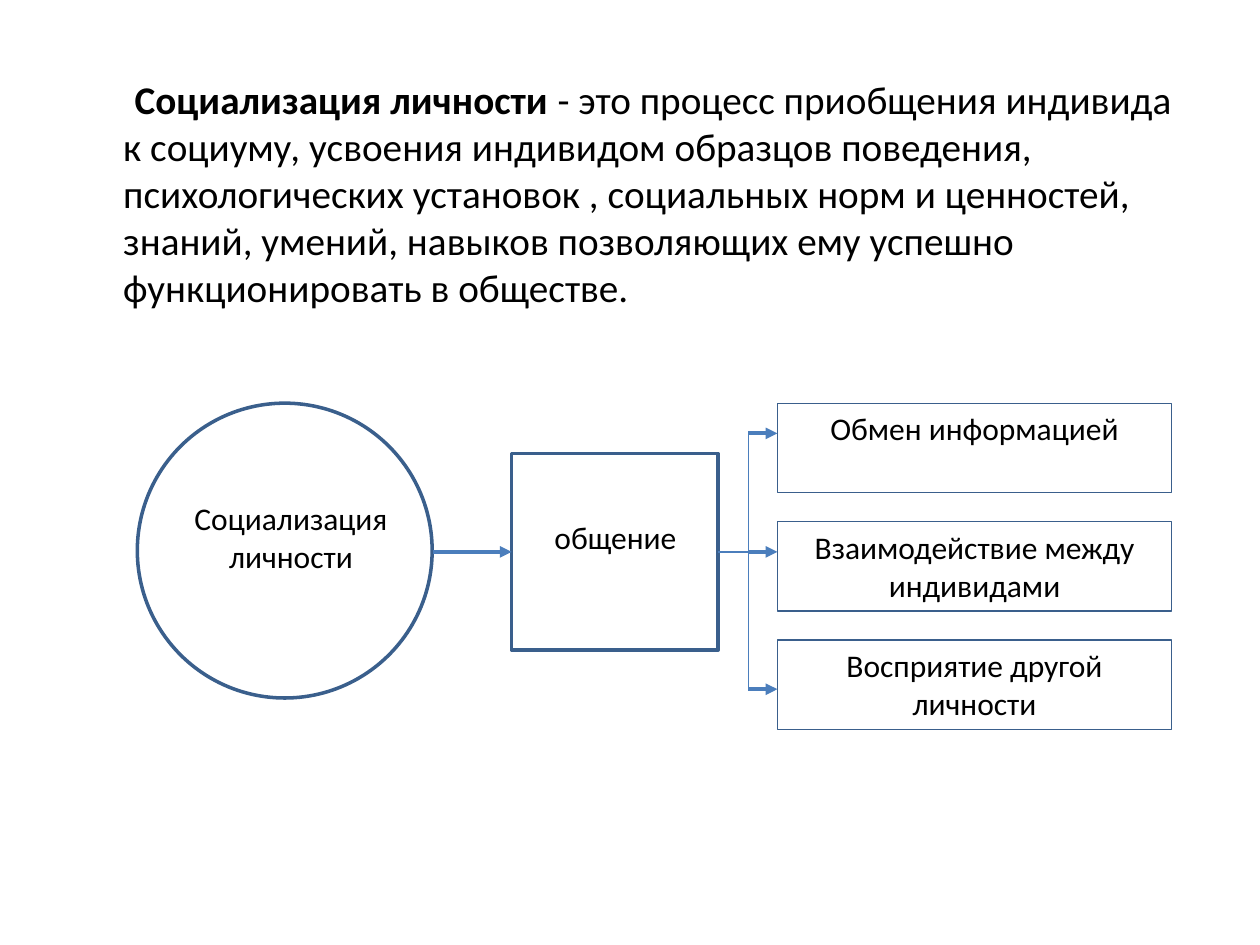
import pptx
import pptx.dml.color
import pptx.enum.shapes
import pptx.enum.text
import pptx.oxml.ns
import pptx.util
from lxml import etree
from pptx.util import Inches

BLACK = pptx.dml.color.RGBColor(0x00, 0x00, 0x00)
OUTLINE = pptx.dml.color.RGBColor(0x3A, 0x5F, 0x8C)
ARROW = pptx.dml.color.RGBColor(0x4B, 0x7E, 0xBC)
SHAPE = pptx.enum.shapes.MSO_SHAPE
ALIGN = pptx.enum.text.PP_ALIGN

DEFINITION = [
    (" ", False),
    ("Социализация личности ", True),
    ("- это процесс приобщения индивида к социуму, усвоения индивидом образцов "
     "поведения, психологических установок , социальных норм и ценностей, знаний, "
     "умений, навыков позволяющих ему успешно функционировать в обществе.", False),
]
OUTCOMES = [
    ("Обмен информацией", 3.44),
    ("Взаимодействие между индивидами", 4.38),
    ("Восприятие другой личности", 5.47),
]


def write_text(shape, spans, size=18, align=ALIGN.CENTER, margin=0, indent=0):
    """Fill a shape with one paragraph of (text, bold) spans."""
    frame = shape.text_frame
    frame.word_wrap = True
    frame.vertical_anchor = pptx.enum.text.MSO_ANCHOR.TOP
    para = frame.paragraphs[0]
    para.alignment = align
    properties = para._p.get_or_add_pPr()
    properties.set("marL", str(Inches(margin)))
    properties.set("indent", str(Inches(indent)))
    for text, bold in spans:
        span = para.add_run()
        span.text = text
        span.font.name = "Calibri"
        span.font.size = pptx.util.Pt(size)
        span.font.bold = bold
        span.font.color.rgb = BLACK


def add_label(slide, spans, left, top, width, height, **text_format):
    """Add a text box."""
    box = slide.shapes.add_textbox(*map(Inches, (left, top, width, height)))
    write_text(box, spans, **text_format)


def add_outline(slide, kind, left, top, width, height, weight):
    """Add an unfilled shape with a dark blue outline."""
    shape = slide.shapes.add_shape(kind, *map(Inches, (left, top, width, height)))
    shape.shadow.inherit = False
    shape.fill.background()
    shape.line.color.rgb = OUTLINE
    shape.line.width = pptx.util.Pt(weight)
    return shape


def add_line(slide, start, end, arrow=False):
    """Add a thin line, or a thicker one with an arrowhead at its end."""
    line = slide.shapes.add_connector(
        pptx.enum.shapes.MSO_CONNECTOR.STRAIGHT, *map(Inches, (*start, *end)))
    line.line.color.rgb = ARROW
    line.line.width = pptx.util.Pt(2.25 if arrow else 0.75)
    if arrow:
        head = etree.SubElement(line.line._get_or_add_ln(), pptx.oxml.ns.qn("a:tailEnd"))
        head.set("type", "triangle")
    etree.SubElement(line._element.spPr, pptx.oxml.ns.qn("a:effectLst"))
    return line


def main():
    """Build the slide and save it."""
    deck = pptx.Presentation()
    deck.slide_width, deck.slide_height = Inches(10), Inches(7.5)
    slide = deck.slides.add_slide(deck.slide_layouts[6])

    add_label(slide, DEFINITION, 0.5, 0.55, 9, 1.72,
              size=22.4, align=ALIGN.LEFT, margin=0.38, indent=0.02)

    add_outline(slide, SHAPE.OVAL, 1.09, 3.2, 2.34, 2.34, 2)
    add_label(slide, [("Социализация личности", False)], 1.41, 3.91, 1.8, 0.71)
    communication = add_outline(slide, SHAPE.RECTANGLE, 4.06, 3.6, 1.64, 1.56, 2)
    add_label(slide, [("общение", False)], 4.22, 4.06, 1.33, 0.4)

    middle, trunk, outcome_left = 4.38, 5.94, 6.17
    for row, (text, arrow_y) in enumerate(OUTCOMES):
        outcome = add_outline(slide, SHAPE.RECTANGLE, outcome_left, 3.2 + 0.94 * row,
                              3.13, 0.71, 0.75)
        write_text(outcome, [(text, False)])
        add_line(slide, (trunk, arrow_y), (outcome_left, arrow_y), arrow=True)

    add_line(slide, (3.44, middle), (4.06, middle), arrow=True).end_connect(communication, 1)
    add_line(slide, (5.7, middle), (trunk, middle)).begin_connect(communication, 3)
    add_line(slide, (trunk, OUTCOMES[0][1]), (trunk, OUTCOMES[-1][1]))

    deck.save("out.pptx")


if __name__ == "__main__":
    main()
